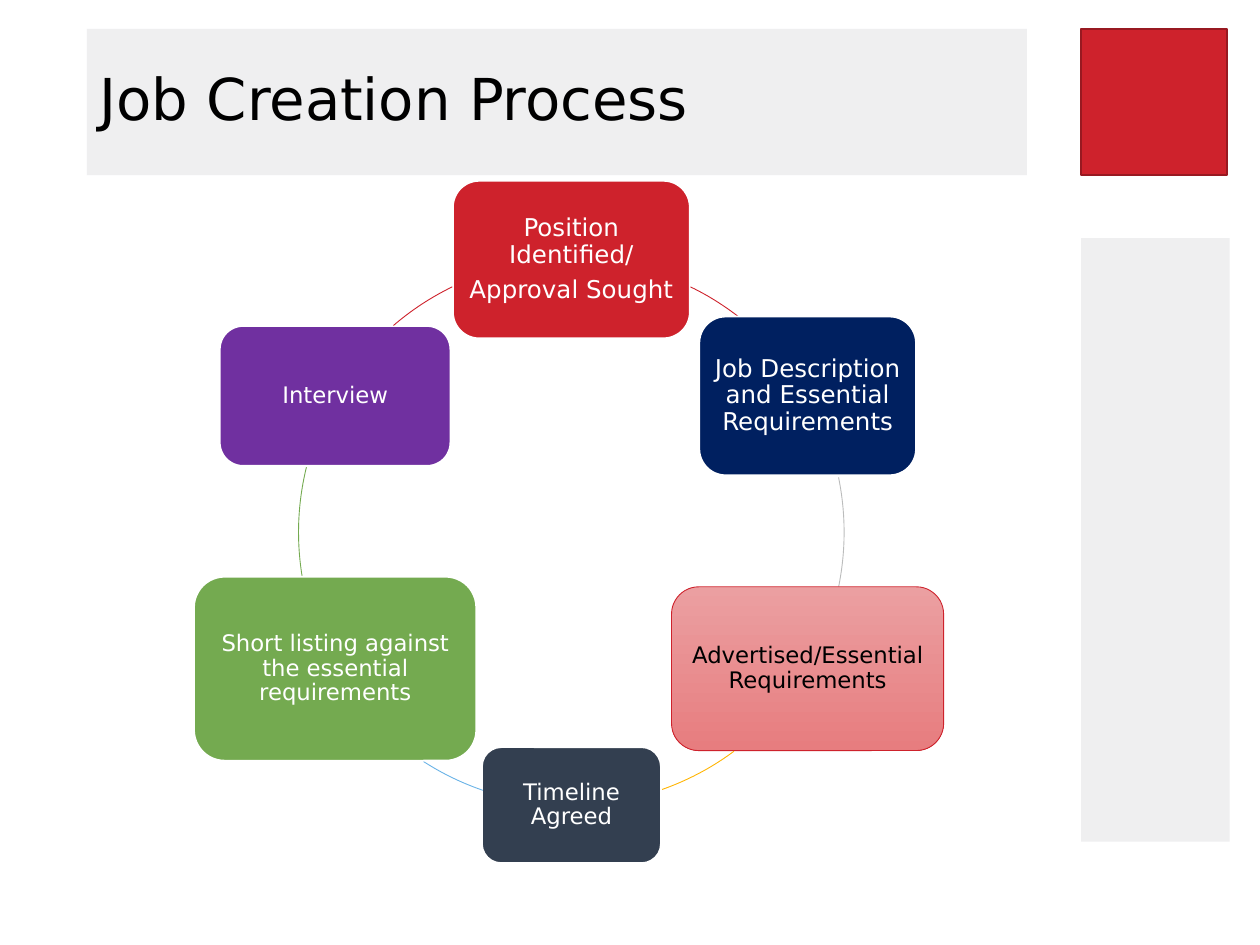
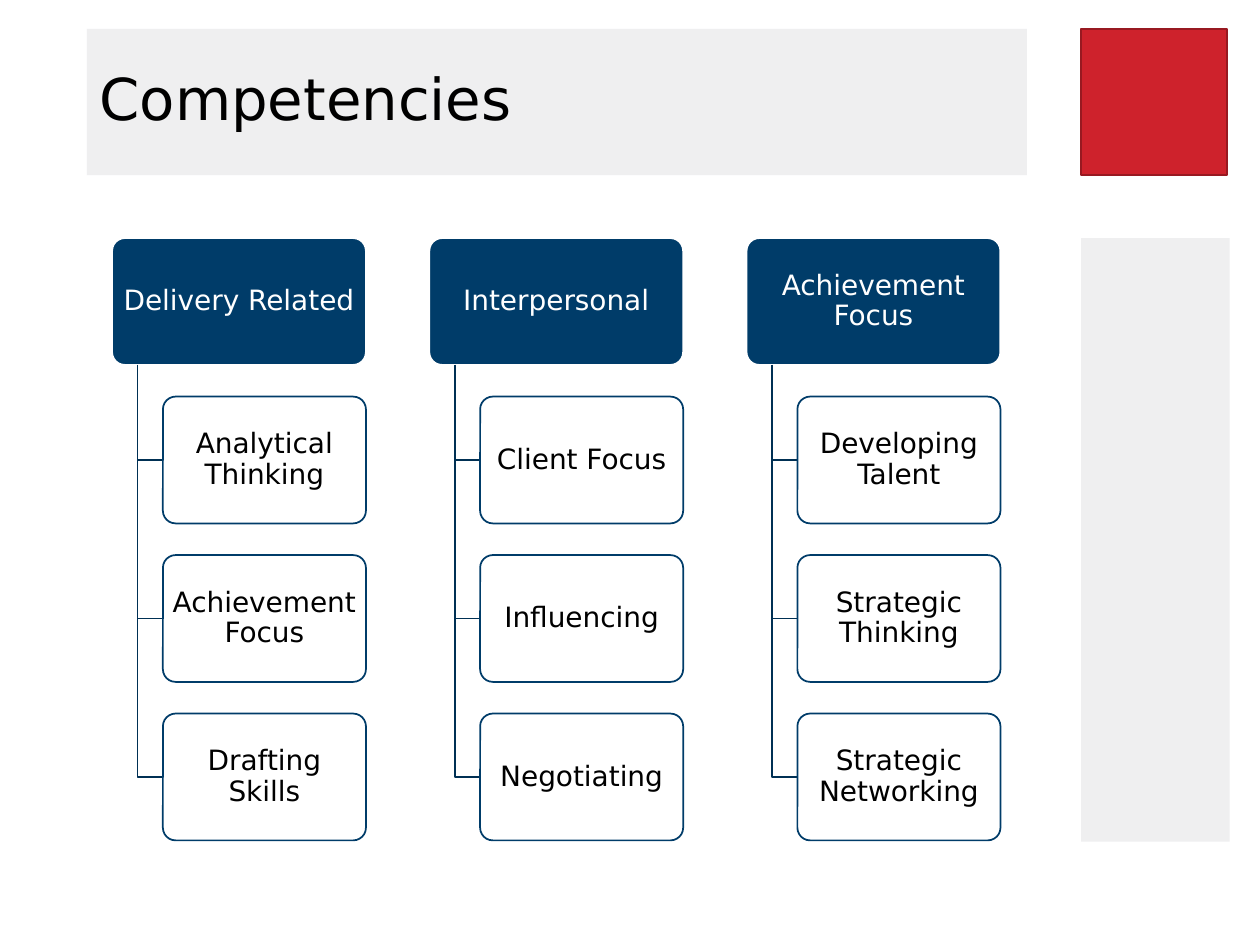
from math import cos, radians, sin
from typing import NamedTuple

from pptx import Presentation
from pptx.dml.color import RGBColor
from pptx.enum.shapes import MSO_SHAPE
from pptx.enum.text import MSO_ANCHOR, MSO_AUTO_SIZE, PP_ALIGN
from pptx.util import Inches, Pt

WIDE, HIGH = Inches(10), Inches(7.5)
COL, ROW = WIDE / 100, HIGH / 75
FONT = "DejaVu Sans"

WHITE = RGBColor(0xFF, 0xFF, 0xFF)
BLACK = RGBColor(0x00, 0x00, 0x00)
PALE = RGBColor(0xEF, 0xEF, 0xF0)
RED = RGBColor(0xCE, 0x22, 0x2C)
MAROON = RGBColor(0x98, 0x19, 0x21)
NAVY = RGBColor(0x00, 0x20, 0x60)
SILVER = RGBColor(0xBB, 0xBC, 0xBC)
ROSE = RGBColor(0xEB, 0x9F, 0xA1)
CORAL = RGBColor(0xE7, 0x7D, 0x7F)
AMBER = RGBColor(0xFF, 0xB5, 0x00)
SLATE = RGBColor(0x33, 0x3F, 0x50)
SKY = RGBColor(0x69, 0xB3, 0xE7)
GREEN = RGBColor(0x74, 0xAA, 0x50)
PURPLE = RGBColor(0x70, 0x30, 0xA0)
BLUE = RGBColor(0x00, 0x3C, 0x69)
DEEP = RGBColor(0x00, 0x30, 0x54)


class Box(NamedTuple):
    """A region measured in grid columns and rows."""
    x: float
    y: float
    w: float
    h: float

    def place(self):
        """Return left, top, width and height in EMU."""
        return (round(self.x * COL), round(self.y * ROW),
                round(self.w * COL), round(self.h * ROW))


class Step(NamedTuple):
    """A step of the cycle and the arc that leaves it."""
    lines: list
    w: float
    h: float
    fill: tuple
    size: int
    start: float
    end: float
    arc: RGBColor


TITLE = Box(6.9, 2.3, 74.6, 11.6)
BADGE = Box(85.8, 2.3, 11.6, 11.6)
SIDE = Box(85.8, 18.9, 11.8, 47.9)
RING = Box(23.7, 20.6, 43.3, 43.3)
TREE = Box(8.9, 18.9, 70.5, 47.8)

STEPS = [
    Step(["Position Identified/", "Approval Sought"], 18.8, 12.5,
         (RED,), 14, 295.9, 307.7, RED),
    Step(["Job Description and Essential Requirements"], 17.2, 12.6,
         (NAVY,), 14, 348.4, 11.5, SILVER),
    Step(["Advertised/Essential Requirements"], 21.6, 13,
         (ROSE, CORAL), 13, 53.4, 70.8, AMBER),
    Step(["Timeline Agreed"], 14.2, 9.2,
         (SLATE,), 13, 108.9, 122.8, SKY),
    Step(["Short listing against the essential requirements"], 22.4, 14.6,
         (GREEN,), 13, 170.8, 193.8, GREEN),
    Step(["Interview"], 18.3, 11.1,
         (PURPLE,), 13, 229.3, 244.1, RED),
]

GROUPS = {
    "Delivery Related":
        ["Analytical Thinking", "Achievement Focus", "Drafting Skills"],
    "Interpersonal":
        ["Client Focus", "Influencing", "Negotiating"],
    "Achievement Focus":
        ["Developing Talent", "Strategic Thinking", "Strategic Networking"],
}


def paint(shape, fill, line=None, width=1.0):
    """Set the fill and line of a shape and drop its shadow."""
    shape.shadow.inherit = False
    if fill is None:
        shape.fill.background()
    else:
        shape.fill.solid()
        shape.fill.fore_color.rgb = fill
    if line is None:
        shape.line.fill.background()
    else:
        shape.line.color.rgb = line
        shape.line.width = Pt(width)


def blend(shape, top, base):
    """Fill a shape with a gradient that runs downwards."""
    shape.fill.gradient()
    shape.fill.gradient_angle = 270
    for stop, color in zip(shape.fill.gradient_stops, (top, base)):
        stop.color.rgb = color


def style(para, size, color, align):
    """Format one paragraph."""
    para.alignment = align
    para.line_spacing = 0.9
    para.font.name = FONT
    para.font.size = Pt(size)
    para.font.color.rgb = color


def label(shape, lines, size, color, inset):
    """Write centred lines in a shape."""
    frame = shape.text_frame
    frame.word_wrap = True
    frame.vertical_anchor = MSO_ANCHOR.MIDDLE
    frame.margin_left = frame.margin_right = Inches(inset[0])
    frame.margin_top = frame.margin_bottom = Inches(inset[1])
    frame.text = "\n".join(lines)
    for para in frame.paragraphs:
        style(para, size, color, PP_ALIGN.CENTER)
        para.space_after = Pt(0.35 * size)


def start(deck, text):
    """Add a slide with its title band, badge and side band."""
    slide = deck.slides.add_slide(deck.slide_layouts[5])
    for box, fill, line in ((SIDE, PALE, None), (BADGE, RED, MAROON)):
        part = slide.shapes.add_shape(MSO_SHAPE.RECTANGLE, *box.place())
        paint(part, fill, line)
    title = slide.shapes.title
    title.left, title.top, title.width, title.height = TITLE.place()
    title.fill.solid()
    title.fill.fore_color.rgb = PALE
    frame = title.text_frame
    frame.text = text
    frame.auto_size = MSO_AUTO_SIZE.NONE
    frame.vertical_anchor = MSO_ANCHOR.MIDDLE
    style(frame.paragraphs[0], 33, BLACK, PP_ALIGN.LEFT)
    return slide


def cycle(slide, box, steps):
    """Set steps at equal angles on a ring, joined by arcs."""
    for i, step in enumerate(steps):
        turn = radians(360 * i / len(steps) - 90)
        x = box.x + box.w / 2 * (1 + cos(turn))
        y = box.y + box.h / 2 * (1 + sin(turn))
        spot = Box(x - step.w / 2, y - step.h / 2, step.w, step.h)
        node = slide.shapes.add_shape(
            MSO_SHAPE.ROUNDED_RECTANGLE, *spot.place())
        if len(step.fill) > 1:
            paint(node, None, RED, 0.5)
            blend(node, *step.fill)
            ink = BLACK
        else:
            paint(node, step.fill[0], WHITE)
            ink = WHITE
        inset = 0.06 if step.size == 14 else 0.05
        label(node, step.lines, step.size, ink, (inset, inset))
        arc = slide.shapes.add_shape(MSO_SHAPE.ARC, *box.place())
        arc.adjustments[0] = step.start * 0.6
        arc.adjustments[1] = step.end * 0.6
        paint(arc, None, step.arc, 0.5)


def card(slide, box, text, fill, line, ink):
    """Add one card of the tree."""
    shape = slide.shapes.add_shape(
        MSO_SHAPE.ROUNDED_RECTANGLE, *box.place())
    shape.adjustments[0] = 0.1
    paint(shape, fill, line)
    label(shape, [text], 16, ink, (0.03, 0.02))


def branch(slide, x, top, end, y):
    """Draw a bent line down from a head card to a child card."""
    path = [(round(a * COL), round(b * ROW))
            for a, b in ((x, top), (x, y), (end, y))]
    pen = slide.shapes.build_freeform(*path[0])
    pen.add_line_segments(path[1:], close=False)
    paint(pen.convert_to_shape(), None, DEEP)


def tree(slide, box, groups):
    """Set each group as a head card with its children hung below."""
    count = len(groups)
    rows = 1 + max(len(kids) for kids in groups.values())
    w = box.w / (1.25 * count - 0.25)
    h = box.h / (1.25 * rows - 0.25)
    for i, (head, kids) in enumerate(groups.items()):
        x = box.x + 1.25 * w * i
        card(slide, Box(x, box.y, w, h), head, BLUE, WHITE, WHITE)
        for j, kid in enumerate(kids, 1):
            spot = Box(x + 0.2 * w, box.y + 1.25 * h * j, 0.8 * w, h)
            branch(slide, x + 0.1 * w, box.y + h, spot.x, spot.y + h / 2)
            card(slide, spot, kid, WHITE, BLUE, BLACK)


def main():
    """Build the deck."""
    deck = Presentation()
    deck.slide_width, deck.slide_height = WIDE, HIGH
    cycle(start(deck, "Job Creation Process"), RING, STEPS)
    tree(start(deck, "Competencies"), TREE, GROUPS)
    deck.save("out.pptx")


if __name__ == "__main__":
    main()
